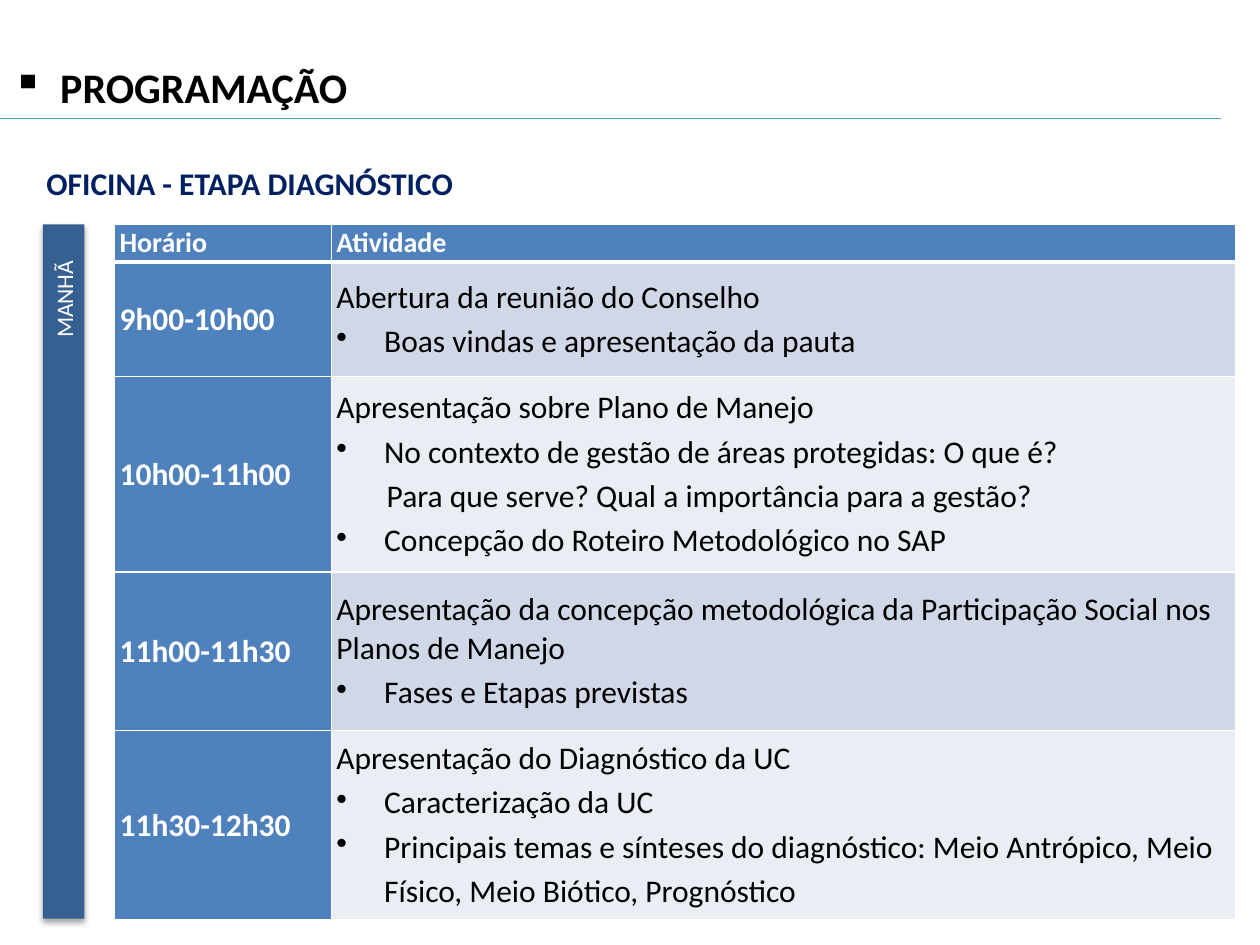
from dataclasses import dataclass

from lxml import etree
from pptx import Presentation, util as u
from pptx.dml.color import RGBColor
from pptx.enum import shapes, text
from pptx.oxml import ns

FONT = "Calibri"
COLORS = {
    "white": "FFFFFF", "black": "000000", "navy": "002060", "period": "376092",
    "header": "4F81BD", "band_dark": "D0D8E8", "band_light": "E9EDF4", "rule": "4BACC6",
}
HANGING = 0.38
CONTINUATION = 0.4


@dataclass
class Line:
    content: str
    bullet: str = ""
    indent: float = 0
    spacing: float | None = None


@dataclass
class Session:
    time: str
    height: float
    lines: list[Line]


def item(content: str) -> Line:
    return Line(content, "•", HANGING, 1.15)


SESSIONS = [
    Session("9h00-10h00", 0.91, [
        Line("Abertura da reunião do Conselho"),
        item("Boas vindas e apresentação da pauta"),
    ]),
    Session("10h00-11h00", 1.55, [
        Line("Apresentação sobre Plano de Manejo"),
        item("No contexto de gestão de áreas protegidas: O que é?"),
        Line("Para que serve? Qual a importância para a gestão?",
             indent=CONTINUATION, spacing=1.15),
        item("Concepção do Roteiro Metodológico no SAP"),
    ]),
    Session("11h00-11h30", 1.26, [
        Line("Apresentação da concepção metodológica da Participação Social "
             "nos Planos de Manejo"),
        item("Fases e Etapas previstas"),
    ]),
    Session("11h30-12h30", 1.5, [
        Line("Apresentação do Diagnóstico da UC"),
        item("Caracterização da UC"),
        item("Principais temas e sínteses do diagnóstico: Meio Antrópico, "
             "Meio Físico, Meio Biótico, Prognóstico"),
    ]),
]


def rgb(name: str) -> RGBColor:
    return RGBColor.from_string(COLORS[name])


def add_xml(parent, tag: str, **attributes):
    element = etree.SubElement(parent, ns.qn(tag))
    for key, value in attributes.items():
        element.set(key, str(value))
    return element


def write(frame, lines: list[Line], *, size: float, color: str = "black",
          bold: bool = False) -> None:
    frame.word_wrap = True
    for index, line in enumerate(lines):
        paragraph = frame.add_paragraph() if index else frame.paragraphs[0]
        paragraph.alignment = text.PP_ALIGN.LEFT
        if line.spacing:
            paragraph.line_spacing = line.spacing
        properties = paragraph._p.get_or_add_pPr()
        properties.set("marL", str(u.Inches(line.indent)))
        if line.bullet:
            properties.set("indent", str(-u.Inches(line.indent)))
            add_xml(properties, "a:buChar", char=line.bullet)
        run = paragraph.add_run()
        run.text = line.content
        run.font.name = FONT
        run.font.size = u.Pt(size)
        run.font.bold = bold
        run.font.color.rgb = rgb(color)


def add_label(slide, box: tuple[float, ...], line: Line, **text_format) -> None:
    shape = slide.shapes.add_textbox(*map(u.Inches, box))
    write(shape.text_frame, [line], **text_format)


def set_borders(cell, top: float, bottom: float) -> None:
    """Draw white borders, with the top and bottom widths given in points."""
    properties = cell._tc.get_or_add_tcPr()
    widths = {"a:lnL": 1, "a:lnR": 1, "a:lnT": top, "a:lnB": bottom}
    for tag, width in widths.items():
        border = add_xml(properties, tag, w=u.Pt(width))
        fill = add_xml(border, "a:solidFill")
        add_xml(fill, "a:srgbClr", val=COLORS["white"])


def fill_cell(cell, lines: list[Line], fill: str, *, top: float = 1,
              bottom: float = 1, **text_format) -> None:
    cell.margin_left = cell.margin_right = u.Inches(0.04)
    cell.margin_top = cell.margin_bottom = 0
    cell.vertical_anchor = text.MSO_ANCHOR.MIDDLE
    set_borders(cell, top, bottom)
    cell.fill.solid()
    cell.fill.fore_color.rgb = rgb(fill)
    write(cell.text_frame, lines, **text_format)


def add_schedule(slide) -> None:
    frame = slide.shapes.add_table(len(SESSIONS) + 1, 2, u.Inches(0.91), u.Inches(1.78),
                                   u.Inches(8.9), u.Inches(5.51))
    table = frame.table
    for column, width in zip(table.columns, (1.72, 7.18)):
        column.width = u.Inches(width)
    table.rows[0].height = u.Inches(0.3)
    for column, title in enumerate(("Horário", "Atividade")):
        fill_cell(table.cell(0, column), [Line(title)], "header", bottom=3,
                  size=16, color="white", bold=True)
    for row, session in enumerate(SESSIONS, start=1):
        table.rows[row].height = u.Inches(session.height)
        top = 3 if row == 1 else 1
        fill_cell(table.cell(row, 0), [Line(session.time)], "header", top=top,
                  size=18, color="white", bold=True)
        band = "band_dark" if row % 2 else "band_light"
        fill_cell(table.cell(row, 1), session.lines, band, top=top, size=18)


def add_period_bar(slide) -> None:
    """Add the upright bar that names the part of the day."""
    bar = slide.shapes.add_shape(shapes.MSO_SHAPE.RECTANGLE, u.Inches(-2.25),
                                 u.Inches(4.37), u.Inches(5.51), u.Inches(0.33))
    bar.rotation = 270
    bar.fill.solid()
    bar.fill.fore_color.rgb = rgb("period")
    bar.line.fill.background()
    effects = add_xml(bar._element.spPr, "a:effectLst")
    shadow = add_xml(effects, "a:outerShdw", blurRad=u.Pt(3.1), dist=u.Pt(1.8),
                     dir=90 * 60000, rotWithShape=0)
    shade = add_xml(shadow, "a:srgbClr", val=COLORS["black"])
    add_xml(shade, "a:alpha", val=35000)
    bar.text_frame.vertical_anchor = text.MSO_ANCHOR.MIDDLE
    write(bar.text_frame, [Line("MANHÃ", indent=4.51)], size=13.5, color="white")


def add_rule(slide) -> None:
    y = u.Inches(0.94)
    rule = slide.shapes.add_connector(shapes.MSO_CONNECTOR.STRAIGHT, 0, y, u.Inches(9.69), y)
    rule.line.color.rgb = rgb("rule")
    rule.line.width = u.Pt(0.75)
    add_xml(rule._element.spPr, "a:effectLst")


def main() -> None:
    presentation = Presentation()
    presentation.slide_width = u.Inches(10)
    presentation.slide_height = u.Inches(7.5)
    slide = presentation.slides.add_slide(presentation.slide_layouts[6])
    add_period_bar(slide)
    add_schedule(slide)
    add_label(slide, (0.27, 1.25, 6.64, 0.4), Line("OFICINA - ETAPA DIAGNÓSTICO"),
              size=18, color="navy", bold=True)
    add_label(slide, (0, 0.44, 10, 0.5), Line("PROGRAMAÇÃO", "▪", HANGING),
              size=24, bold=True)
    add_rule(slide)
    presentation.save("out.pptx")


if __name__ == "__main__":
    main()
